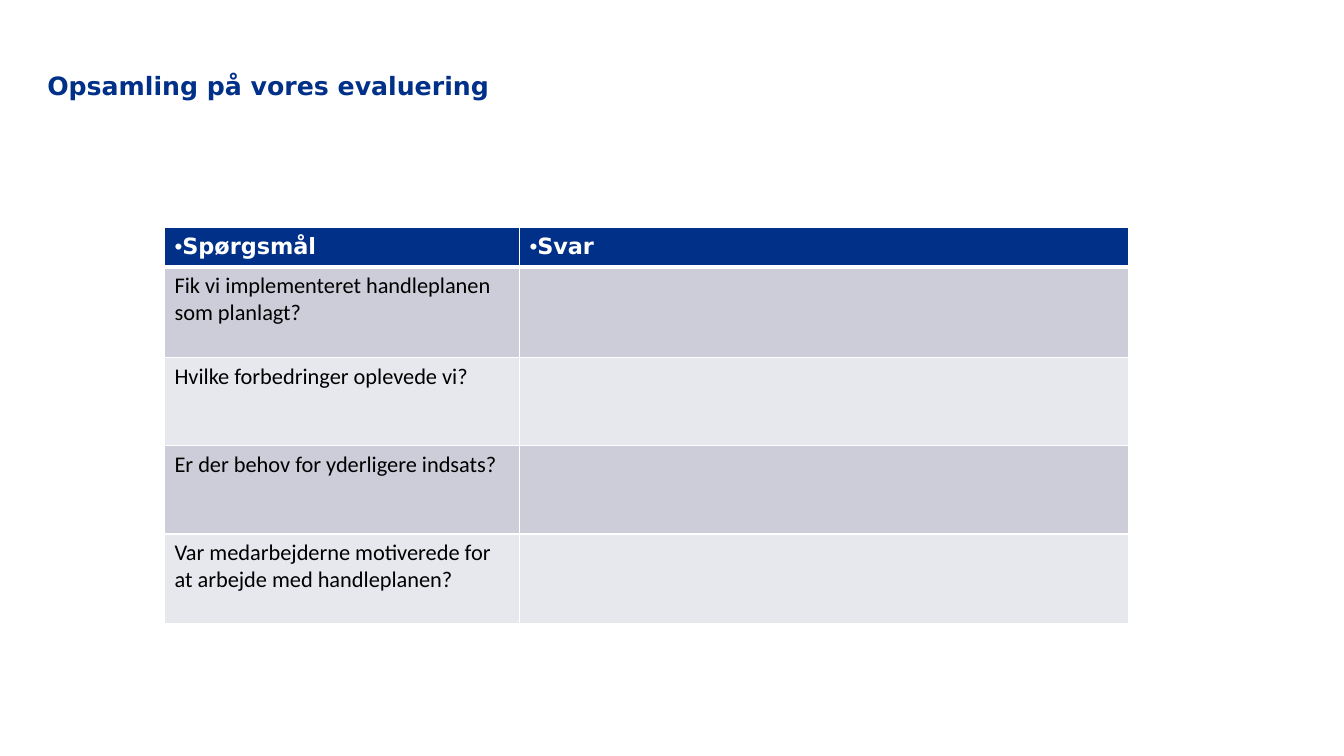
from pptx import Presentation
from pptx.dml.color import RGBColor as Rgb
from pptx.enum.text import MSO_ANCHOR as Anchor, PP_ALIGN as Align
from pptx.oxml import parse_xml
from pptx.oxml.ns import nsdecls
from pptx.util import Pt

COLORS = {"navy": "003087", "white": "FFFFFF", "black": "000000",
          "dark": "CCCDD9", "light": "E7E8ED"}
HEADS = ["Spørgsmål", "Svar"]
ASKS = [
    ("Fik vi implementeret handleplanen som planlagt?", 65),
    ("Hvilke forbedringer oplevede vi?", 63),
    ("Er der behov for yderligere indsats?", 63),
    ("Var medarbejderne motiverede for at arbejde med handleplanen?", 64),
]
HEAD_H = 28
SPLIT = 0.368


def color(name):
    return Rgb.from_string(COLORS[name])


def style(para, face, size, tint, bold=False):
    font = para.font
    font.name, font.size, font.bold = face, Pt(size), bold
    font.color.rgb = color(tint)


def bullet(para):
    props = para._p.get_or_add_pPr()
    props.set("marL", "0")
    props.set("indent", "0")
    for tag in ('buFont {} typeface="Arial"', 'buChar {} char="•"'):
        props.append(parse_xml("<a:" + tag.format(nsdecls("a")) + "/>"))


def border(cell, base):
    """Draw white lines round a cell; base is the width of the bottom one."""
    props = cell._tc.get_or_add_tcPr()
    widths = {"lnL": 1, "lnR": 1, "lnT": 1, "lnB": base}
    for spot, (tag, width) in enumerate(widths.items()):
        props.insert(spot, parse_xml(
            f'<a:{tag} {nsdecls("a")} w="{Pt(width)}"><a:solidFill>'
            f'<a:srgbClr val="{COLORS["white"]}"/></a:solidFill></a:{tag}>'))


def paint(cell, tint, base=1):
    cell.fill.solid()
    cell.fill.fore_color.rgb = color(tint)
    border(cell, base)


def add_title(slide, left, top, width, height):
    title = slide.shapes.title
    title.left, title.top = Pt(left), Pt(top)
    title.width, title.height = Pt(width), Pt(height)
    frame = title.text_frame
    frame.margin_left = frame.margin_right = 0
    frame.margin_top = frame.margin_bottom = 0
    frame.vertical_anchor = Anchor.TOP
    frame.word_wrap = True
    frame.text = "Opsamling på vores evaluering"
    para = frame.paragraphs[0]
    para.alignment = Align.LEFT
    para.line_spacing = 1.04
    style(para, "DejaVu Sans", 18, "navy", True)


def add_grid(slide, left, top, width):
    sizes = [HEAD_H] + [size for _, size in ASKS]
    table = slide.shapes.add_table(
        len(sizes), len(HEADS), Pt(left), Pt(top),
        Pt(width), Pt(sum(sizes))).table
    for col, share in zip(table.columns, (SPLIT, 1 - SPLIT)):
        col.width = Pt(width * share)
    for row, size in zip(table.rows, sizes):
        row.height = Pt(size)

    for col, head in enumerate(HEADS):
        cell = table.cell(0, col)
        cell.text = head
        para = cell.text_frame.paragraphs[0]
        para.line_spacing = 1.04
        para.space_after = Pt(3)
        bullet(para)
        style(para, "DejaVu Sans", 16, "white", True)
        paint(cell, "navy", 3)

    for row, (ask, _) in enumerate(ASKS, 1):
        table.cell(row, 0).text = ask
        for col in range(len(HEADS)):
            cell = table.cell(row, col)
            style(cell.text_frame.paragraphs[0], "Calibri", 16, "black")
            paint(cell, "dark" if row % 2 else "light")


def main():
    deck = Presentation()
    deck.slide_width, deck.slide_height = Pt(960), Pt(540)
    slide = deck.slides.add_slide(deck.slide_layouts[5])
    add_title(slide, 33.8, 49, 892, 28)
    add_grid(slide, 117.5, 162.5, 689)
    deck.save("out.pptx")


if __name__ == "__main__":
    main()
